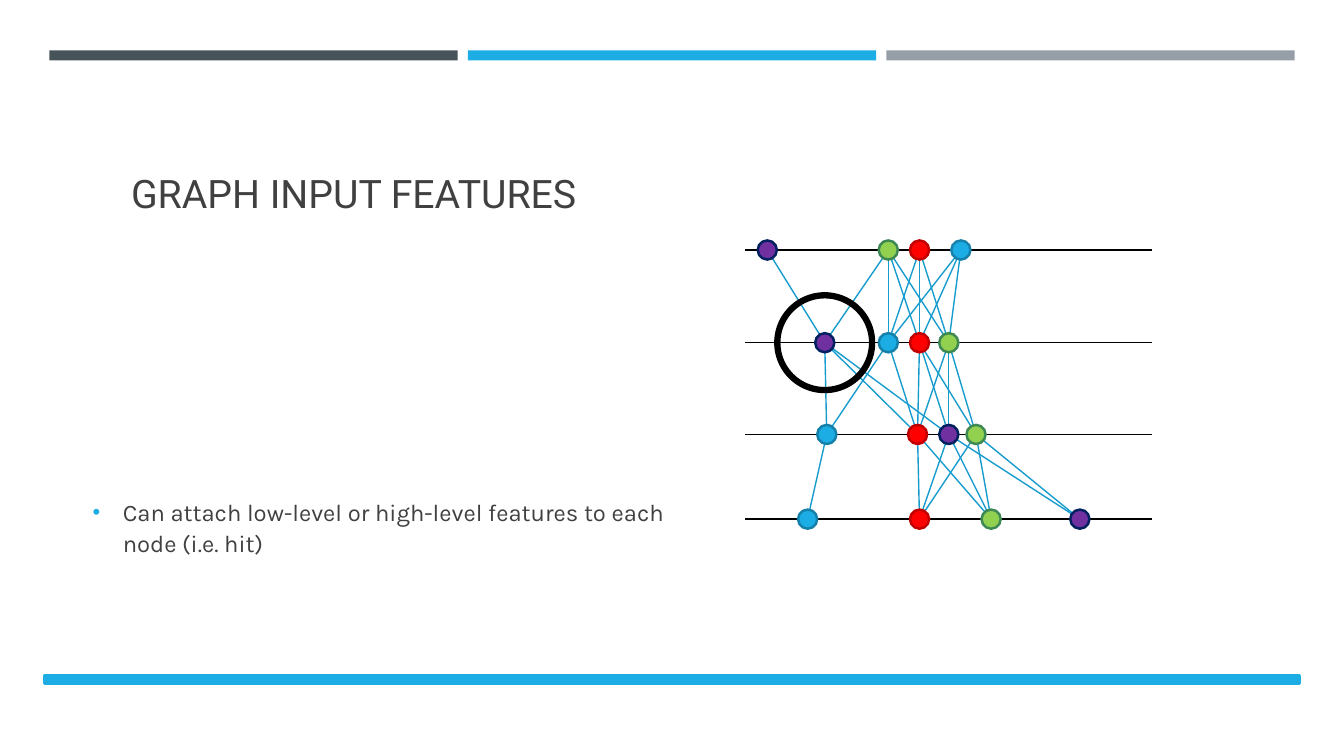
from lxml import etree
from pptx import Presentation
from pptx.dml.color import RGBColor
from pptx.enum import shapes, text
from pptx.oxml.ns import qn
from pptx.util import Inches, Pt

ACCENT, INK = "1CADE4", "404040"

# Fill and outline of each kind of node
NODE_COLORS = {
    "b": (ACCENT, "1580A9"),
    "r": ("FF0000", "C00000"),
    "g": ("92D050", "3E8853"),
    "p": ("7030A0", "002060"),
}
# Each layer: its depth below the first, then the node centres along it
LAYERS = [
    (0, {"p": 0.22, "g": 1.42, "r": 1.73, "b": 2.14}),
    (0.92, {"p": 0.79, "b": 1.42, "r": 1.73, "g": 2.02}),
    (1.83, {"b": 0.81, "r": 1.71, "p": 2.02, "g": 2.29}),
    (2.67, {"b": 0.62, "r": 1.73, "g": 2.44, "p": 3.32}),
]
# Edges between neighbouring layers, as upper node and lower node
EDGES = [
    "pp gp gb gr gg rb rr rg bb br bg",
    "pb pr pp bb br rr rp rg gr gp gg",
    "bb rr rg pr pg pp gr gg gp",
]


def rgb(color):
    return RGBColor.from_string(color)


def add_shape(parent, kind, x, y, w, h, fill=None, line=None, width=1.75):
    sp = parent.add_shape(kind, Inches(x), Inches(y), Inches(w), Inches(h))
    sp.shadow.inherit = False
    if fill:
        sp.fill.solid()
        sp.fill.fore_color.rgb = rgb(fill)
    else:
        sp.fill.background()
    if line:
        sp.line.color.rgb = rgb(line)
        sp.line.width = Pt(width)
    else:
        sp.line.fill.background()
    return sp


def add_circle(parent, cx, cy, size, **style):
    return add_shape(parent, shapes.MSO_SHAPE.OVAL, cx - size / 2, cy - size / 2,
                     size, size, **style)


def add_line(parent, x1, y1, x2, y2, color):
    cx = parent.add_connector(shapes.MSO_CONNECTOR.STRAIGHT, Inches(x1), Inches(y1),
                              Inches(x2), Inches(y2))
    cx.line.color.rgb = rgb(color)
    cx.line.width = Pt(1)
    etree.SubElement(cx._element.spPr, qn("a:effectLst"))


def add_run(p, words, font, size):
    r = p.add_run()
    r.text = words
    r.font.name, r.font.size = font, Pt(size)
    r.font.color.rgb = rgb(INK)


def add_bars(s, x, y, w):
    """Three bars across the top and one along the bottom."""
    gap = 0.1
    bar = (w - 2 * gap) / 3
    rect = shapes.MSO_SHAPE.RECTANGLE
    for i, color in enumerate(("465359", ACCENT, "969FA7")):
        add_shape(s.shapes, rect, x + i * (bar + gap), y, bar, 0.1, color)
    add_shape(s.shapes, rect, x - 0.05, 6.7, w + 0.1, 0.08, ACCENT, ACCENT)


def add_title(s, x, y, w, h):
    sp = s.shapes.title
    sp.left, sp.top, sp.width, sp.height = map(Inches, (x, y, w, h))
    tf = sp.text_frame
    tf.auto_size = text.MSO_AUTO_SIZE.NONE
    tf.vertical_anchor = text.MSO_ANCHOR.BOTTOM
    p = tf.paragraphs[0]
    p.alignment = text.PP_ALIGN.LEFT
    add_run(p, "GRAPH INPUT FEATURES", "Roboto", 28)


def add_body(s, x, y, w, h):
    tf = s.shapes.add_textbox(Inches(x), Inches(y), Inches(w), Inches(h)).text_frame
    tf.word_wrap = True
    tf.vertical_anchor = text.MSO_ANCHOR.MIDDLE
    p = tf.paragraphs[0]
    p.line_spacing, p.space_after = 1.1, Pt(6)
    pPr = p._p.get_or_add_pPr()
    pPr.set("marL", str(Inches(0.3)))
    pPr.set("indent", str(Inches(-0.3)))
    color = etree.SubElement(pPr, qn("a:buClr"))
    etree.SubElement(color, qn("a:srgbClr"), val=ACCENT)
    etree.SubElement(pPr, qn("a:buSzPct"), val="92000")
    etree.SubElement(pPr, qn("a:buFont"), typeface="Arial")
    etree.SubElement(pPr, qn("a:buChar"), char="•")
    add_run(p, "Can attach low-level or high-level features to each node (i.e. hit)",
            "Karla", 17)


def add_graph(s, x, y, w):
    """Layered graph with one node ringed; y is the first layer."""
    graph = s.shapes.add_group_shape().shapes
    centres = [{key: (x + dx, y + dy) for key, dx in nodes.items()}
               for dy, nodes in LAYERS]
    for upper, lower, pairs in zip(centres, centres[1:], EDGES):
        for start, end in pairs.split():
            add_line(graph, *lower[end], *upper[start], "189CCE")
    for dy, _ in LAYERS:
        add_line(graph, x, y + dy, x + w, y + dy, "000000")
    for layer in centres:
        for key, (cx, cy) in layer.items():
            fill, line = NODE_COLORS[key]
            add_circle(graph, cx, cy, 0.19, fill=fill, line=line)
    add_circle(s.shapes, *centres[1]["p"], 0.94, line="000000", width=4.5)


def main():
    prs = Presentation()
    prs.slide_width, prs.slide_height = Inches(13.33), Inches(7.5)
    s = prs.slides.add_slide(prs.slide_layouts[5])
    add_bars(s, 0.49, 0.5, 12.35)
    add_title(s, 1.2, 0.75, 11.5, 1.45)
    add_body(s, 0.82, 2.84, 5.9, 4.76)
    add_graph(s, 7.39, 2.48, 4.04)
    prs.save("out.pptx")


if __name__ == "__main__":
    main()
